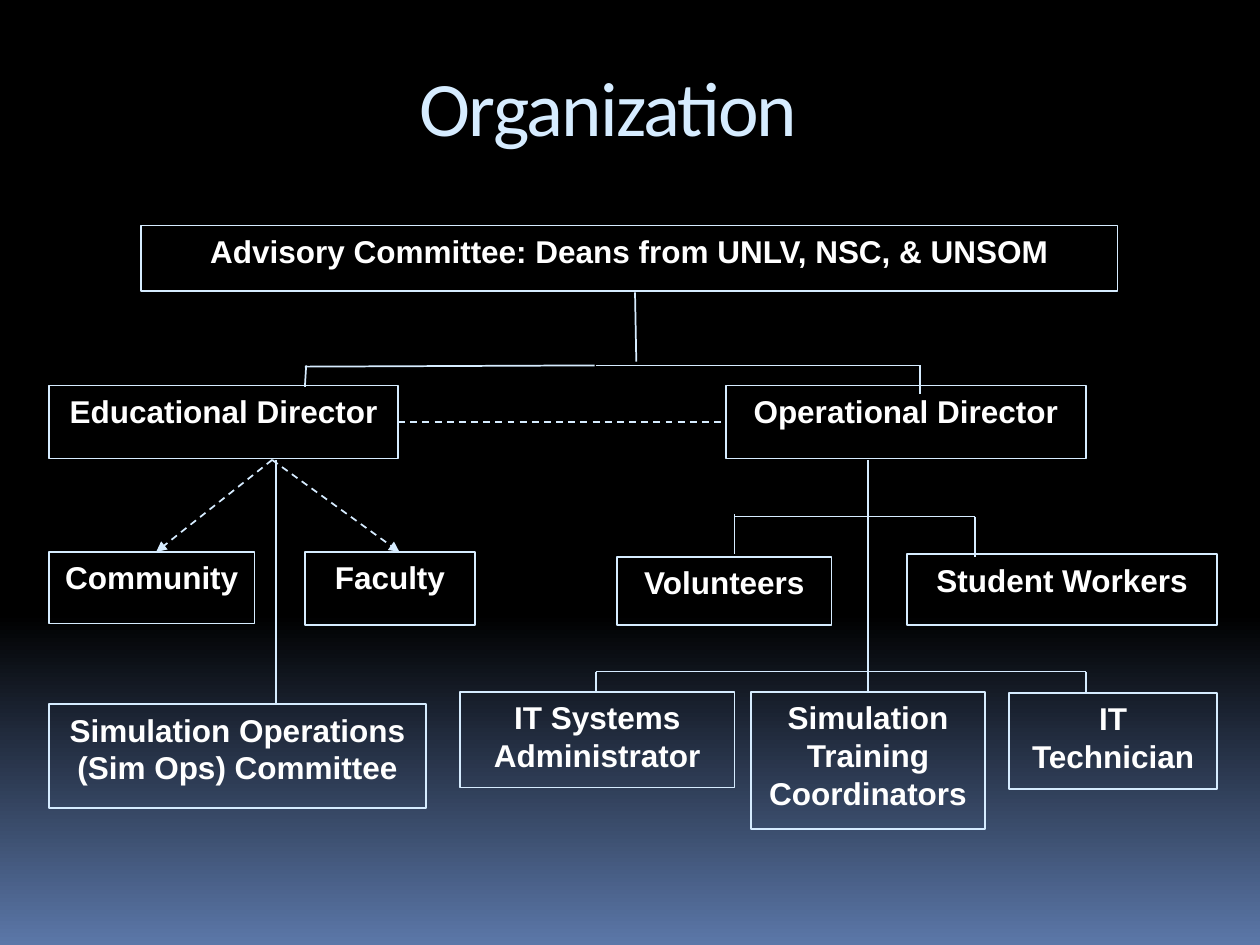
from copy import deepcopy

from pptx import Presentation
from pptx import util as u
from pptx.dml.color import RGBColor
from pptx.enum import dml, shapes, text
from pptx.oxml.ns import qn
from lxml import etree

PX = 9144  # 100 px to the inch
ICE, WHITE, BLACK, BLUE = "D6ECFF", "FFFFFF", "000000", "5B77A8"


def px(*values):
    return [u.Emu(value * PX) for value in values]


def color(value):
    return RGBColor.from_string(value)


def write(shape, words, size, font, fill, bold=False):
    frame = shape.text_frame
    frame.word_wrap = True
    frame.vertical_anchor = text.MSO_ANCHOR.TOP
    frame.text = words
    paragraph = frame.paragraphs[0]
    paragraph.alignment = text.PP_ALIGN.CENTER
    run = paragraph.runs[0]
    run.font.size = u.Pt(size)
    run.font.name = font
    run.font.bold = bold
    run.font.color.rgb = color(fill)
    return run


def add_role(slide, origin, place, words):
    left, top, width, height = place
    box = px(origin[0] + left, origin[1] + top, width, height)
    shape = slide.shapes.add_shape(shapes.MSO_SHAPE.RECTANGLE, *box)
    shape.shadow.inherit = False
    shape.fill.background()
    shape.line.color.rgb = color(ICE)
    shape.line.width = u.Pt(1)
    write(shape, words, 18, "Arial", WHITE, bold=True)


def add_link(slide, origin, ends, dashed=False, arrow=False):
    x, y = origin[:2]
    x1, y1, x2, y2 = ends
    link = slide.shapes.add_connector(
        shapes.MSO_CONNECTOR.STRAIGHT, *px(x + x1, y + y1, x + x2, y + y2))
    link.line.color.rgb = color(ICE)
    link.line.width = u.Pt(1)
    if dashed:
        link.line.dash_style = dml.MSO_LINE.DASH
    if arrow:
        line = link.line._get_or_add_ln()
        etree.SubElement(line, qn("a:tailEnd"), type="triangle")
    etree.SubElement(link._element.spPr, qn("a:effectLst"))


def add_background(slide):
    fill = slide.background.fill
    fill.gradient()
    fill.gradient_angle = 270
    stop_list = slide.element.find(".//" + qn("a:gsLst"))
    stop_list.insert(0, deepcopy(stop_list[0]))
    for stop, (position, value) in zip(
            fill.gradient_stops, [(0, BLACK), (0.65, BLACK), (1, BLUE)]):
        stop.position = position
        stop.color.rgb = color(value)


def add_title(slide, box):
    title = slide.shapes.add_textbox(*px(*box))
    run = write(title, "Organization", 44, "Calibri", ICE)
    run.font._element.set("spc", "-100")


def add_leadership(slide, box):
    add_role(slide, box, (0, 0, box[2], 52),
             "Advisory Committee: Deans from UNLV, NSC, & UNSOM")
    for ends in [(392, 53, 393, 108),    # trunk
                 (361, 111, 618, 111), (618, 111, 618, 134),   # operations
                 (360, 111, 130, 112), (131, 111, 130, 128)]:  # education
        add_link(slide, box, ends)
    # Link between the two directors
    add_link(slide, box, (204, 156, 464, 156), dashed=True)


def add_education(slide, box):
    for place, words in [
            ((0, 0, 277, 58), "Educational Director"),
            ((0, 132, 163, 57), "Community"),
            ((203, 132, 135, 58), "Faculty"),
            ((0, 253, 299, 82), "Simulation Operations (Sim Ops) Committee")]:
        add_role(slide, box, place, words)
    add_link(slide, box, (180, 253, 180, 59))
    for target in (278, 85):
        add_link(slide, box, (177, 59, target, 132), dashed=True, arrow=True)


def add_operations(slide, box):
    for place, words in [
            ((211, 0, 286, 58), "Operational Director"),
            ((125, 136, 170, 54), "Volunteers"),
            ((355, 134, 246, 56), "Student Workers"),
            ((0, 243, 218, 76), "IT Systems Administrator"),
            ((231, 243, 186, 109), "Simulation Training Coordinators"),
            ((436, 244, 165, 76), "IT Technician")]:
        add_role(slide, box, place, words)
    add_link(slide, box, (324, 59, 324, 243))
    # Each bracket: left, right, level, then the two drops
    for left, right, level, drops in [
            (218, 409, 104, ((102, 134), (104, 136))),
            (108, 497, 227, ((227, 243), (227, 243)))]:
        add_link(slide, box, (left, level, right, level))
        for x, (top, bottom) in zip((left, right), drops):
            add_link(slide, box, (x, top, x, bottom))


def main():
    presentation = Presentation()
    presentation.slide_width, presentation.slide_height = px(1000, 750)
    slide = presentation.slides.add_slide(presentation.slide_layouts[6])
    add_background(slide)
    add_title(slide, (308, 42, 350, 58))
    add_leadership(slide, (112, 179, 775, 156))
    add_education(slide, (39, 306, 338, 335))
    add_operations(slide, (365, 306, 601, 352))
    presentation.save("out.pptx")


if __name__ == "__main__":
    main()
